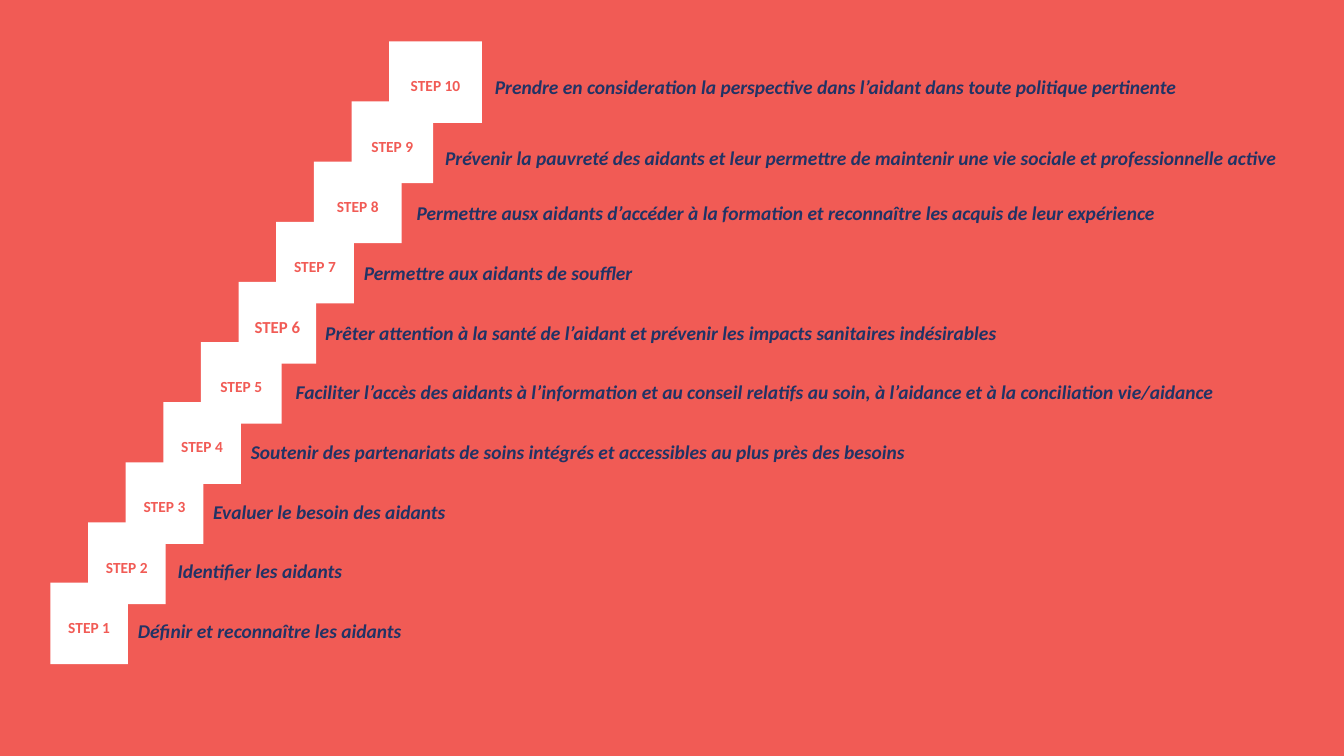
from dataclasses import dataclass

from pptx import Presentation
from pptx.dml.color import RGBColor
from pptx.enum.shapes import MSO_SHAPE
from pptx.enum.text import MSO_ANCHOR, MSO_AUTO_SIZE, PP_ALIGN
from pptx.util import Pt

RECTANGLE = MSO_SHAPE.RECTANGLE
TOP, MIDDLE = MSO_ANCHOR.TOP, MSO_ANCHOR.MIDDLE
LEFT, CENTER = PP_ALIGN.LEFT, PP_ALIGN.CENTER
GROW = MSO_AUTO_SIZE.SHAPE_TO_FIT_TEXT
EMU_PER_PX = 9144
BLANK_LAYOUT = 6


@dataclass(frozen=True)
class Theme:
    font: str = "Calibri"
    coral: RGBColor = RGBColor(0xF1, 0x5B, 0x55)
    navy: RGBColor = RGBColor(0x21, 0x33, 0x65)
    white: RGBColor = RGBColor(0xFF, 0xFF, 0xFF)
    label_size: int = 11
    large_label_size: int = 12
    text_size: int = 24
    text_baseline: int = 30000


@dataclass(frozen=True)
class Step:
    text: str
    text_width: int
    drop: int
    gap: int = 0
    block_width: int = 77
    text_height: int = 37
    label_size: int = Theme.label_size


STEPS = [
    Step("Définir et reconnaître les aidants", 399, 34),
    Step("Identifier les aidants", 734, 34, gap=2),
    Step("Evaluer le besoin des aidants", 399, 35),
    Step("Soutenir des partenariats de soins intégrés et accessibles au plus près des besoins",
         1002, 35),
    Step("Faciliter l’accès des aidants à l’information et au conseil relatifs au soin, "
         "à l’aidance et à la conciliation vie/aidance", 1066, 35, gap=4, block_width=80),
    Step("Prêter attention à la santé de l’aidant et prévenir les impacts sanitaires indésirables",
         832, 36, gap=-1, label_size=Theme.large_label_size),
    Step("Permettre aux aidants de souffler", 399, 36),
    Step("Permettre ausx aidants d’accéder à la formation et reconnaître les acquis de leur expérience",
         852, 37, gap=5, block_width=87),
    Step("Prévenir la pauvreté des aidants et leur permettre de maintenir une vie sociale "
         "et professionnelle active", 901, 28, gap=2, block_width=81, text_height=64),
    Step("Prendre en consideration la perspective dans l’aidant dans toute politique pertinente",
         807, 31, gap=3, block_width=92),
]
SLIDE_SIZE = (1333, 750)
STAIRCASE = (50, 41, 336, 537)
BLOCK_HEIGHT = 81
LABEL_DROP, LABEL_HEIGHT = 30, 29


def px(*lengths):
    return [round(length * EMU_PER_PX) for length in lengths]


def add_text(shapes, box, text, font, align=LEFT, anchor=TOP, baseline=None):
    tf = shapes.add_textbox(*px(*box)).text_frame
    frame = {"word_wrap": True, "auto_size": GROW, "vertical_anchor": anchor}
    for name, value in frame.items():
        setattr(tf, name, value)
    p = tf.paragraphs[0]
    p.alignment = align
    r = p.add_run()
    r.text = text
    color = font["color"]
    for name, value in font.items():
        if name != "color":
            setattr(r.font, name, value)
    r.font.color.rgb = color
    if baseline:
        r.font._element.set("baseline", str(baseline))


def add_step(s, number, step, left, top, theme):
    shapes = s.shapes.add_group_shape().shapes
    block = shapes.add_shape(RECTANGLE, *px(left, top, step.block_width, BLOCK_HEIGHT))
    block.shadow.inherit = False
    block.fill.solid()
    block.fill.fore_color.rgb = theme.white
    block.line.fill.background()

    label_font = {"name": theme.font, "size": Pt(step.label_size), "bold": True,
                  "color": theme.coral}
    add_text(shapes, (left, top + LABEL_DROP, step.block_width, LABEL_HEIGHT),
             f"STEP {number}", label_font, align=CENTER)

    text_font = {"name": theme.font, "size": Pt(theme.text_size), "bold": True,
                 "italic": True, "color": theme.navy}
    text_left = left + step.block_width + step.gap
    add_text(shapes, (text_left, top + step.drop, step.text_width, step.text_height),
             step.text, text_font, anchor=MIDDLE, baseline=theme.text_baseline)


def add_staircase(s, box, steps, theme):
    left, top, width, height = box
    last = len(steps) - 1
    for i, step in reversed(list(enumerate(steps))):
        add_step(s, i + 1, step, left + width * i / last,
                 top + height * (last - i) / last, theme)


def main():
    theme = Theme()
    prs = Presentation()
    prs.slide_width, prs.slide_height = px(*SLIDE_SIZE)
    s = prs.slides.add_slide(prs.slide_layouts[BLANK_LAYOUT])
    s.background.fill.solid()
    s.background.fill.fore_color.rgb = theme.coral
    add_staircase(s, STAIRCASE, STEPS, theme)
    prs.save("out.pptx")


if __name__ == "__main__":
    main()
